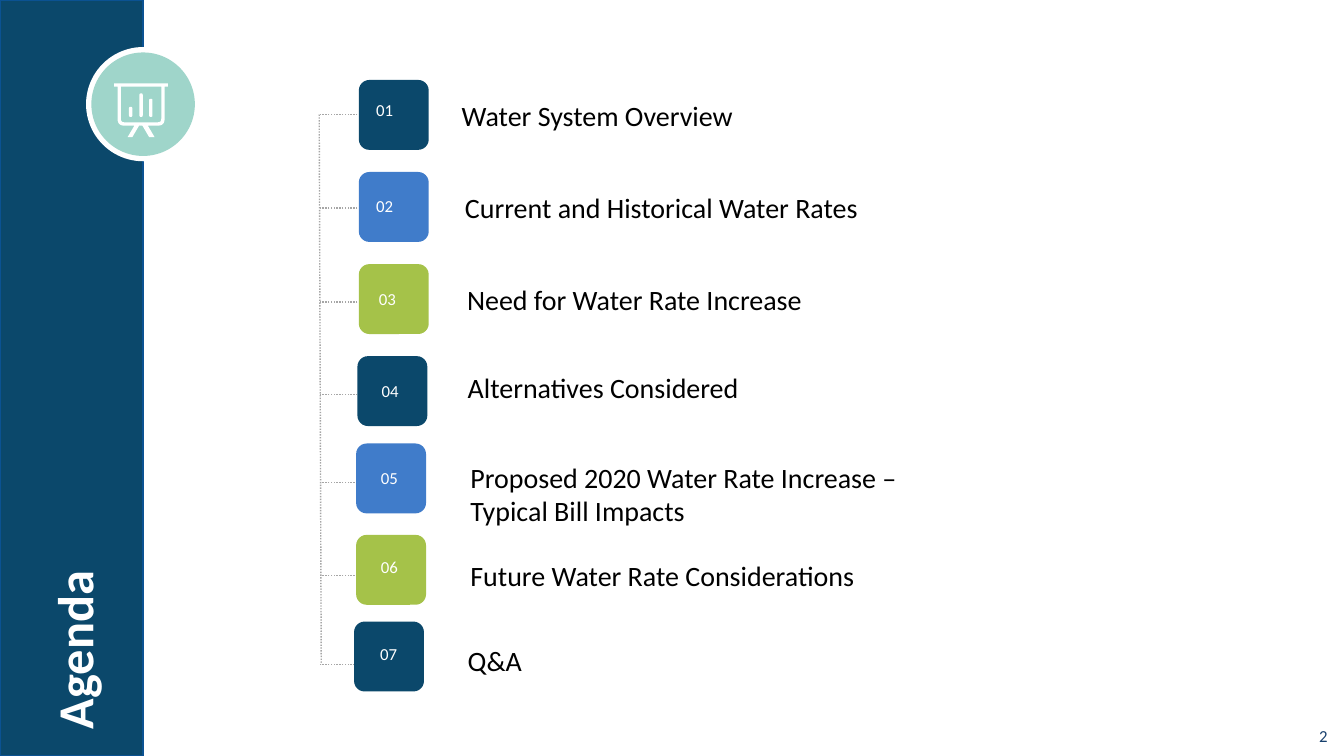
from math import hypot

from lxml import etree
from pptx import Presentation
from pptx.dml.color import RGBColor
from pptx.enum.dml import MSO_LINE
from pptx.enum.shapes import MSO_CONNECTOR, MSO_SHAPE
from pptx.enum.text import MSO_ANCHOR, PP_ALIGN
from pptx.oxml.ns import qn
from pptx.util import Pt

STRAIGHT = MSO_CONNECTOR.STRAIGHT
RECTANGLE = MSO_SHAPE.RECTANGLE
ROUNDED = MSO_SHAPE.ROUNDED_RECTANGLE
OVAL = MSO_SHAPE.OVAL
DOTTED = MSO_LINE.ROUND_DOT
TOP, MIDDLE = MSO_ANCHOR.TOP, MSO_ANCHOR.MIDDLE
LEFT = PP_ALIGN.LEFT

WIDTH, HEIGHT = 1440, 810
FONT = "Calibri"
NAVY, BLUE, GREEN, MINT = "0B486B", "407CCA", "A5C249", "9FD5CA"
WHITE, BLACK, GREY = "FFFFFF", "000000", "A6A6A6"
BADGE_SIZE = 74.9

# Title, badge corner in the list, then number, title and branch from that corner
AGENDA = [
    ("Water System Overview", (42.5, 0), (11.5, 17.3), (110.1, 20.1), 37),
    ("Current and Historical Water Rates", (42.5, 98.6), (11.5, 21.6), (113.7, 20.2), 38.7),
    ("Need for Water Rate Increase", (42.5, 197.3), (14.4, 22.3), (115.9, 20.1), 40.6),
    ("Alternatives Considered", (41, 295.9), (18.8, 22.3), (118.1, 15.1), 41),
    ("Proposed 2020 Water Rate Increase – Typical Bill Impacts",
     (39.6, 389.5), (19.4, 22.3), (122.4, 18), 42),
    ("Future Water Rate Considerations", (39.6, 487.4), (19.4, 20.2), (122.4, 25.2), 43.6),
    ("Q&A", (37.4, 580.3), (20.9, 20.2), (121.7, 23), 45.7),
]


def color(value):
    return RGBColor.from_string(value)


def paint(shape, fill, line=None):
    shape.shadow.inherit = False
    shape.fill.solid()
    shape.fill.fore_color.rgb = color(fill)
    if line:
        shape.line.color.rgb = color(line)
        shape.line.width = Pt(2)
    else:
        shape.line.fill.background()


def add_block(slide, kind, box, fill, line=None):
    shape = slide.shapes.add_shape(kind, *map(Pt, box))
    paint(shape, fill, line)
    return shape


def add_text(slide, box, text, size, text_color, bold=False, wrap=True,
             anchor=TOP, insets=(7.2, 3.6)):
    text_box = slide.shapes.add_textbox(*map(Pt, box))
    frame = text_box.text_frame
    horizontal, vertical = map(Pt, insets)
    frame_format = {
        "word_wrap": wrap, "vertical_anchor": anchor,
        "margin_left": horizontal, "margin_right": horizontal,
        "margin_top": vertical, "margin_bottom": vertical,
    }
    for name, value in frame_format.items():
        setattr(frame, name, value)
    paragraph = frame.paragraphs[0]
    paragraph.alignment = LEFT
    run = paragraph.add_run()
    run.text = text
    for name, value in {"name": FONT, "size": Pt(size), "bold": bold}.items():
        setattr(run.font, name, value)
    run.font.color.rgb = color(text_color)
    return text_box


def add_dotted_line(slide, start, end):
    line = slide.shapes.add_connector(STRAIGHT, *map(Pt, (*start, *end)))
    line.line.color.rgb = color(GREY)
    line.line.width = Pt(1.5)
    line.line.dash_style = DOTTED
    etree.SubElement(line._element.spPr, qn("a:effectLst"))


def round_corners(corners, steps=6):
    """Turn (x, y, radius) corners into the points of a rounded outline."""
    points = []
    for index, (x, y, radius) in enumerate(corners):
        if not radius:
            points.append((x, y))
            continue
        ends = []
        for near_x, near_y, _ in (corners[index - 1], corners[(index + 1) % len(corners)]):
            share = radius / hypot(near_x - x, near_y - y)
            ends.append((x + (near_x - x) * share, y + (near_y - y) * share))
        (x1, y1), (x2, y2) = ends
        for step in range(steps + 1):
            t = step / steps
            a, b, c = (1 - t) ** 2, 2 * t * (1 - t), t ** 2
            points.append((a * x1 + b * x + c * x2, a * y1 + b * y + c * y2))
    return points


def add_board_icon(slide, left, top, size):
    """Presentation board with three bars, on an 80 by 80 grid."""
    frame = [(0, 0, 0), (80, 0, 0), (80, 5, 0), (75, 5, 0), (75, 63, 10), (50, 63, 0),
             (60, 80, 0), (52, 80, 0), (42, 63, 0), (37, 63, 0), (27, 80, 0),
             (20, 80, 0), (30, 63, 0), (5, 63, 10), (5, 5, 0), (0, 5, 0)]
    opening = [(10, 5, 0), (10, 58, 5), (70, 58, 5), (70, 5, 0)]
    bars = [[(x, bar_top, 2.4), (x + 5, bar_top, 2.4), (x + 5, 50, 2.4), (x, 50, 2.4)]
            for x, bar_top in ((22, 35), (37.5, 15), (52, 23))]
    unit = size / 80
    builder = None
    for outline in [frame, opening, *bars]:
        points = [(Pt(left + x * unit), Pt(top + y * unit))
                  for x, y in round_corners(outline)]
        if builder is None:
            builder = slide.shapes.build_freeform(*points[0], scale=1.0)
        else:
            builder.move_to(*points[0])
        builder.add_line_segments(points[1:], close=True)
    paint(builder.convert_to_shape(), WHITE)


def add_sidebar(slide, left, top, width, height):
    add_block(slide, RECTANGLE, (left, top, width, height), NAVY, "0B5292")
    # Title reading upwards
    title = add_text(slide, (left - 151.9, top + 521.3, 461.5, 72.7),
                     "Agenda", 54, WHITE, bold=True)
    title.rotation = 270
    # Round emblem on the edge
    add_block(slide, OVAL, (left + 92.2, top + 50.4, 122.4, 122.4), WHITE)
    add_block(slide, OVAL, (left + 97.9, top + 56.2, 110.9, 110.9), MINT)
    add_board_icon(slide, left + 122.4, top + 89.3, 57.6)


def add_agenda(slide, left, top):
    # Dotted tree behind the badges
    ends = [corner[1] + branch for _, corner, _, _, branch in AGENDA]
    add_dotted_line(slide, (left, top + ends[0]), (left + 2.2, top + ends[-1]))
    for end in ends:
        add_dotted_line(slide, (left + 59, top + end), (left + 0.5, top + end))
    # Badges, numbers and titles
    fills = (NAVY, BLUE, GREEN)
    for index, (title, corner, number_at, title_at, _) in enumerate(AGENDA):
        x, y = left + corner[0], top + corner[1]
        badge = add_block(slide, ROUNDED, (x, y, BADGE_SIZE, BADGE_SIZE),
                          fills[index % len(fills)])
        badge.adjustments[0] = 0.15
        add_text(slide, (x + number_at[0], y + number_at[1], 33.1, 28.8),
                 f"{index + 1:02d}", 18, WHITE, wrap=False)
        two_lines = len(title) > 40
        add_text(slide, (x + title_at[0], y + title_at[1],
                         507 if two_lines else 533, 72.7 if two_lines else 36),
                 title, 30, BLACK, insets=(0, 0))


def add_page_number(slide, left, top, width, height):
    add_text(slide, (left, top, width, height), "2", 18, "17406D",
             wrap=False, anchor=MIDDLE, insets=(13, 6.5))


def main():
    presentation = Presentation()
    presentation.slide_width, presentation.slide_height = Pt(WIDTH), Pt(HEIGHT)
    slide = presentation.slides.add_slide(presentation.slide_layouts[6])
    slide.background.fill.solid()
    slide.background.fill.fore_color.rgb = color(WHITE)
    add_page_number(slide, 1400.4, 766.8, 39.6, 43.2)
    add_agenda(slide, 342, 85.7)
    add_sidebar(slide, 0, 0, 153.4, HEIGHT)
    presentation.save("out.pptx")


if __name__ == "__main__":
    main()
